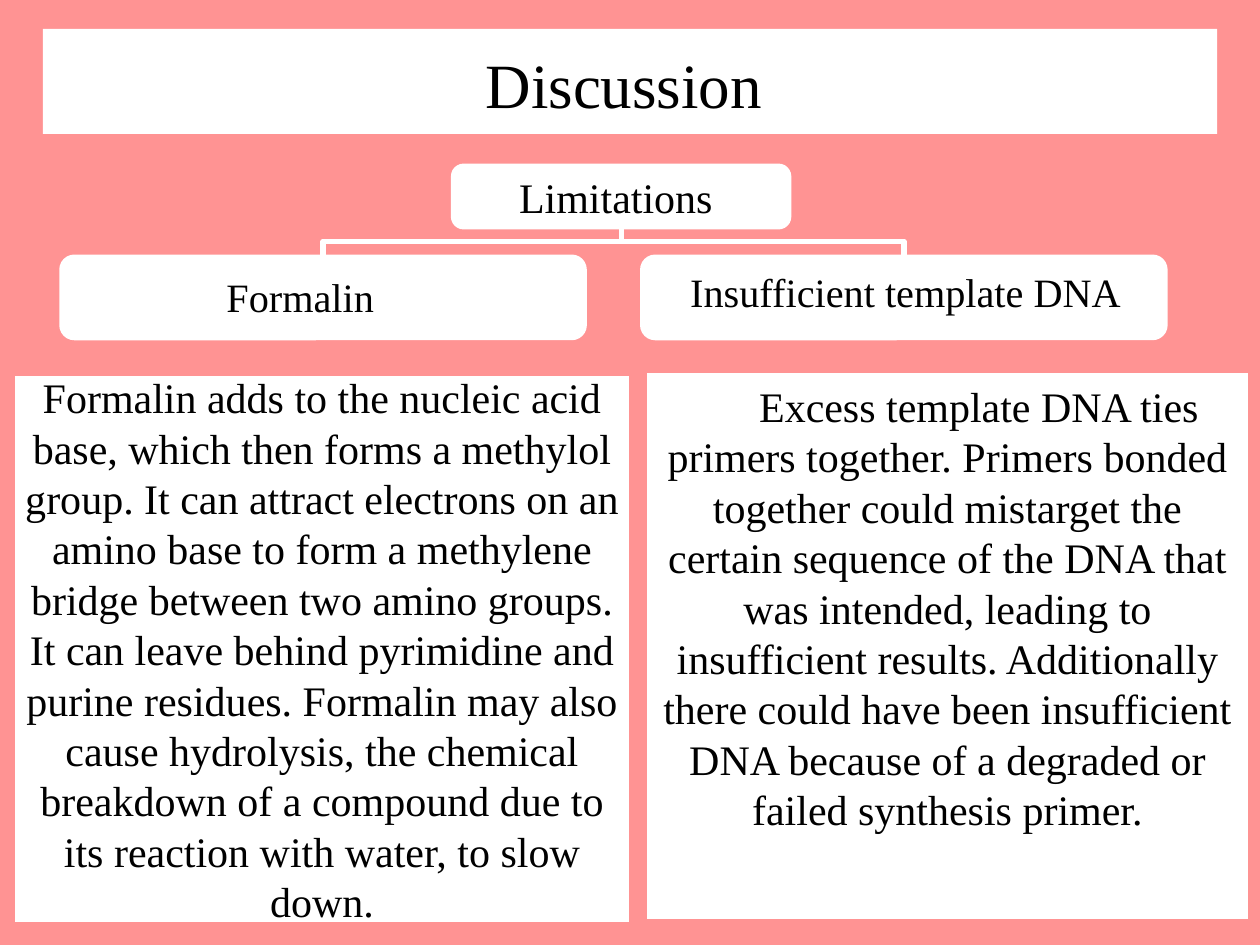
from dataclasses import dataclass
from typing import Optional

from lxml.etree import SubElement
from pptx import Presentation
from pptx.dml.color import RGBColor
from pptx.enum.shapes import MSO_CONNECTOR, MSO_SHAPE
from pptx.enum.text import MSO_ANCHOR, PP_ALIGN
from pptx.oxml.ns import qn
from pptx.util import Pt

COLORS = {"background": "FF9393", "box": "FFFFFF", "text": "000000"}
FONT = "Times New Roman"
INSET = 7.2

FORMALIN = (
    "Formalin adds to the nucleic acid base, which then forms a methylol group. "
    "It can attract electrons on an amino base to form a methylene bridge between "
    "two amino groups. It can leave behind pyrimidine and purine residues. Formalin "
    "may also cause hydrolysis, the chemical breakdown of a compound due to its "
    "reaction with water, to slow down."
)
TEMPLATE_DNA = (
    "Excess template DNA ties primers together. Primers bonded together could "
    "mistarget the certain sequence of the DNA that was intended, leading to "
    "insufficient results. Additionally there could have been insufficient DNA "
    "because of a degraded or failed synthesis primer."
)


@dataclass
class Area:
    left: float
    top: float
    width: float
    height: float

    @property
    def center(self) -> float:
        return self.left + self.width / 2

    @property
    def bottom(self) -> float:
        return self.top + self.height

    def lengths(self) -> tuple:
        return Pt(self.left), Pt(self.top), Pt(self.width), Pt(self.height)


@dataclass
class Box:
    area: Area
    text: str = ""
    size: float = 24
    anchor: MSO_ANCHOR = MSO_ANCHOR.MIDDLE
    rounded: bool = False
    line: Optional[str] = None
    line_width: float = 0
    indent: float = 0


@dataclass
class Label:
    area: Area
    text: str


def color(name: str) -> RGBColor:
    return RGBColor.from_string(COLORS[name])


def write(frame, text: str, size: float, anchor: MSO_ANCHOR, indent: float = 0) -> None:
    frame.word_wrap = True
    frame.vertical_anchor = anchor
    frame.margin_left = frame.margin_right = Pt(INSET)
    frame.margin_top = frame.margin_bottom = Pt(INSET)
    para = frame.paragraphs[0]
    para.text = text
    para.alignment = PP_ALIGN.CENTER
    para.font.name = FONT
    para.font.size = Pt(size)
    para.font.color.rgb = color("text")
    if indent:
        properties = para._p.get_or_add_pPr()
        properties.set("marL", "0")
        properties.set("indent", str(Pt(indent)))


def draw_box(page, box: Box) -> None:
    kind = MSO_SHAPE.ROUNDED_RECTANGLE if box.rounded else MSO_SHAPE.RECTANGLE
    shape = page.shapes.add_shape(kind, *box.area.lengths())
    shape.shadow.inherit = False
    shape.fill.solid()
    shape.fill.fore_color.rgb = color("box")
    if box.line:
        shape.line.color.rgb = color(box.line)
        shape.line.width = Pt(box.line_width)
    else:
        shape.line.fill.background()
    if box.text:
        write(shape.text_frame, box.text, box.size, box.anchor, box.indent)


def draw_label(page, label: Label) -> None:
    box = page.shapes.add_textbox(*label.area.lengths())
    write(box.text_frame, label.text, 23, MSO_ANCHOR.TOP)


def draw_branch(page, parent: Area, child: Area) -> None:
    """Elbow from the parent's bottom to the child's top, turned to run vertically."""
    side = 1 if child.center > parent.center else -1
    half_span = abs(child.center - parent.center) / 2
    half_drop = (child.top - parent.bottom) / 2
    middle_x = (parent.center + child.center) / 2
    middle_y = (parent.bottom + child.top) / 2
    elbow = page.shapes.add_connector(
        MSO_CONNECTOR.ELBOW,
        Pt(middle_x + side * half_drop), Pt(middle_y - half_span),
        Pt(middle_x - side * half_drop), Pt(middle_y + half_span),
    )
    elbow.line.color.rgb = color("box")
    elbow.line.width = Pt(3)
    properties = elbow._element.spPr
    turn = 270 if side > 0 else 90
    properties.find(qn("a:xfrm")).set("rot", str(turn * 60000))
    SubElement(properties, qn("a:effectLst"))


def main() -> None:
    deck = Presentation()
    deck.slide_width, deck.slide_height = Pt(720), Pt(540)
    page = deck.slides.add_slide(deck.slide_layouts[6])
    page.background.fill.solid()
    page.background.fill.fore_color.rgb = color("background")

    # Title bar: the trailing space is smaller than the word
    title = Box(Area(24.5, 16.5, 671, 60), "Discussion", 36, MSO_ANCHOR.BOTTOM)
    draw_box(page, title)
    span = page.shapes[0].text_frame.paragraphs[0].add_run()
    span.text = " "
    span.font.size = Pt(28)

    # Tree boxes and explanation panels
    root = Area(259.2, 95, 191.5, 34.6)
    formalin, template = (Area(left, 146.2, 300, 47.5) for left in (34.6, 366.5))
    boxes = [
        Box(root, "Limitations ", rounded=True, line="box", line_width=3),
        Box(Area(5.8, 211.7, 356.4, 318.2), FORMALIN, line="background", line_width=6),
        Box(template, rounded=True, line="box", line_width=1.5),
        Box(Area(366.5, 210.2, 349.9, 318.2), TEMPLATE_DNA, anchor=MSO_ANCHOR.TOP,
            line="background", line_width=6, indent=36),
        Box(formalin, rounded=True, line="box", line_width=1.5),
    ]
    for box in boxes:
        draw_box(page, box)

    # Branches of the tree
    for child in (formalin, template):
        draw_branch(page, root, child)

    # Names of the branches
    labels = [
        Label(Area(384.5, 145.4, 266.4, 59.8), "Insufficient template DNA"),
        Label(Area(24.5, 148.3, 300, 34.6), "Formalin "),
    ]
    for label in labels:
        draw_label(page, label)

    deck.save("out.pptx")


if __name__ == "__main__":
    main()
